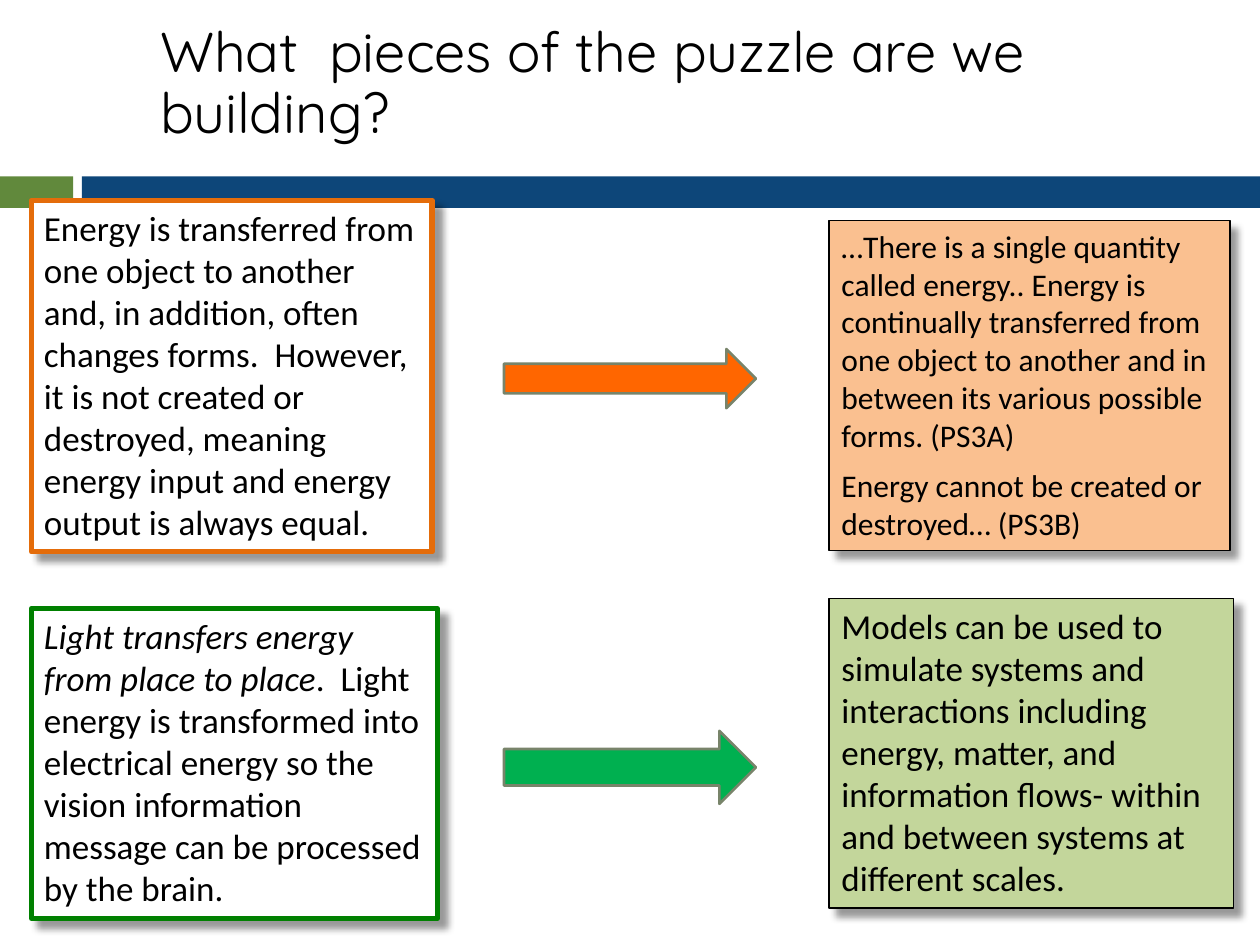
from lxml.etree import SubElement
from pptx import Presentation
from pptx.dml.color import RGBColor
from pptx.enum.shapes import MSO_SHAPE as SHAPE
from pptx.enum.text import MSO_ANCHOR, PP_ALIGN
from pptx.oxml.ns import qn
from pptx.util import Inches, Pt

THEME = {
    "title_font": "Quicksand", "body_font": "Calibri",
    "title": 32, "body": 20, "small": 18,
    "text": "000000", "white": "FFFFFF", "green_band": "61893C", "blue_band": "0D4679",
    "arrow_line": "78846A", "shadow": "000000",
}

# Content: a paragraph is a list of (text, italic) runs
TITLE = "What  pieces of the puzzle are we building?"
BANDS = [  # place, fill, line
    ((0, 1.4, 0.58, 0.25), THEME["green_band"], None),
    ((0.65, 1.4, 9.35, 0.25), THEME["blue_band"], None),
    ((0, 6.7, 10, 0.8), THEME["white"], THEME["white"]),
]
CARDS = [
    {"at": (0.25, 1.59, 3.18, 2.79), "fill": THEME["white"], "line": "E46C0A", "width": 3,
     "size": THEME["body"], "text": [
         [("Energy is transferred from one object to another and, in addition, often changes "
           "forms.  However, it is not created or destroyed, meaning energy input and energy "
           "output is always equal.", False)]]},
    {"at": (0.25, 4.83, 3.22, 2.46), "fill": THEME["white"], "line": "008000", "width": 3,
     "size": THEME["body"], "text": [
         [("Light transfers energy from place to place", True),
          (".  Light energy is transformed into electrical energy so the vision information "
           "message can be processed by the brain.", False)]]},
    {"at": (6.58, 1.75, 3.18, 2.62), "fill": "FAC090", "line": "000000", "width": 1,
     "size": THEME["small"], "text": [
         [("…There is a single quantity called energy.. Energy is continually transferred from "
           "one object to another and in between its various possible forms. (PS3A)", False)],
         [("Energy cannot be created or destroyed… (PS3B)", False)]]},
    {"at": (6.58, 4.75, 3.21, 2.46), "fill": "C3D69B", "line": "000000", "width": 1,
     "size": THEME["body"], "text": [
         [("Models can be used to simulate systems and interactions including energy, matter, "
           "and information flows- within and between systems at different scales.", False)]]},
]
ARROWS = [((4, 2.77, 2, 0.47), "FF6600"), ((4, 5.8, 2, 0.58), "00B050")]


def write(sp, paragraphs, *, font, size, anchor, line_spacing=None, gap=0):
    tf = sp.text_frame
    tf.word_wrap = True
    tf.vertical_anchor = anchor
    tf.margin_left = tf.margin_right = Inches(0.1)
    tf.margin_top = tf.margin_bottom = Inches(0.05)
    for i, runs in enumerate(paragraphs):
        p = tf.add_paragraph() if i else tf.paragraphs[0]
        p.alignment = PP_ALIGN.LEFT
        p.space_before = Pt(gap if i else 0)
        if line_spacing:
            p.line_spacing = line_spacing
        for text, italic in runs:
            r = p.add_run()
            r.text = text
            r.font.name, r.font.size, r.font.italic = font, Pt(size), italic
            r.font.color.rgb = RGBColor.from_string(THEME["text"])


def add_block(slide, kind, at, fill, line=None, width=1.5):
    sp = slide.shapes.add_shape(kind, *map(Inches, at))
    sp.shadow.inherit = False
    sp.fill.solid()
    sp.fill.fore_color.rgb = RGBColor.from_string(fill)
    if line:
        sp.line.color.rgb = RGBColor.from_string(line)
        sp.line.width = Pt(width)
    else:
        sp.line.fill.background()
    return sp


def add_shadow(sp):
    effects = sp._element.spPr.find(qn("a:effectLst"))
    shadow = SubElement(effects, qn("a:outerShdw"), blurRad=str(Pt(4)), dist=str(Pt(6)),
                        dir=str(45 * 60000), algn="tl", rotWithShape="0")
    color = SubElement(shadow, qn("a:srgbClr"), val=THEME["shadow"])
    SubElement(color, qn("a:alpha"), val="40000")


def main():
    prs = Presentation()
    prs.slide_width, prs.slide_height = Inches(10), Inches(7.5)
    slide = prs.slides.add_slide(prs.slide_layouts[5])

    # Title
    title = slide.shapes.title
    title.left, title.top, title.width, title.height = map(Inches, (1.17, 0.17, 8.83, 1.01))
    write(title, [[(TITLE, False)]], font=THEME["title_font"], size=THEME["title"],
          anchor=MSO_ANCHOR.MIDDLE, line_spacing=0.9)

    # Bands behind the cards
    for at, fill, line in BANDS:
        add_block(slide, SHAPE.RECTANGLE, at, fill, line)

    # Text cards
    for card in CARDS:
        sp = add_block(slide, SHAPE.RECTANGLE, card["at"], card["fill"], card["line"], card["width"])
        add_shadow(sp)
        write(sp, card["text"], font=THEME["body_font"], size=card["size"],
              anchor=MSO_ANCHOR.TOP, gap=7)

    # Arrows from left to right cards
    for at, fill in ARROWS:
        add_block(slide, SHAPE.RIGHT_ARROW, at, fill, THEME["arrow_line"])

    prs.save("out.pptx")


if __name__ == "__main__":
    main()
